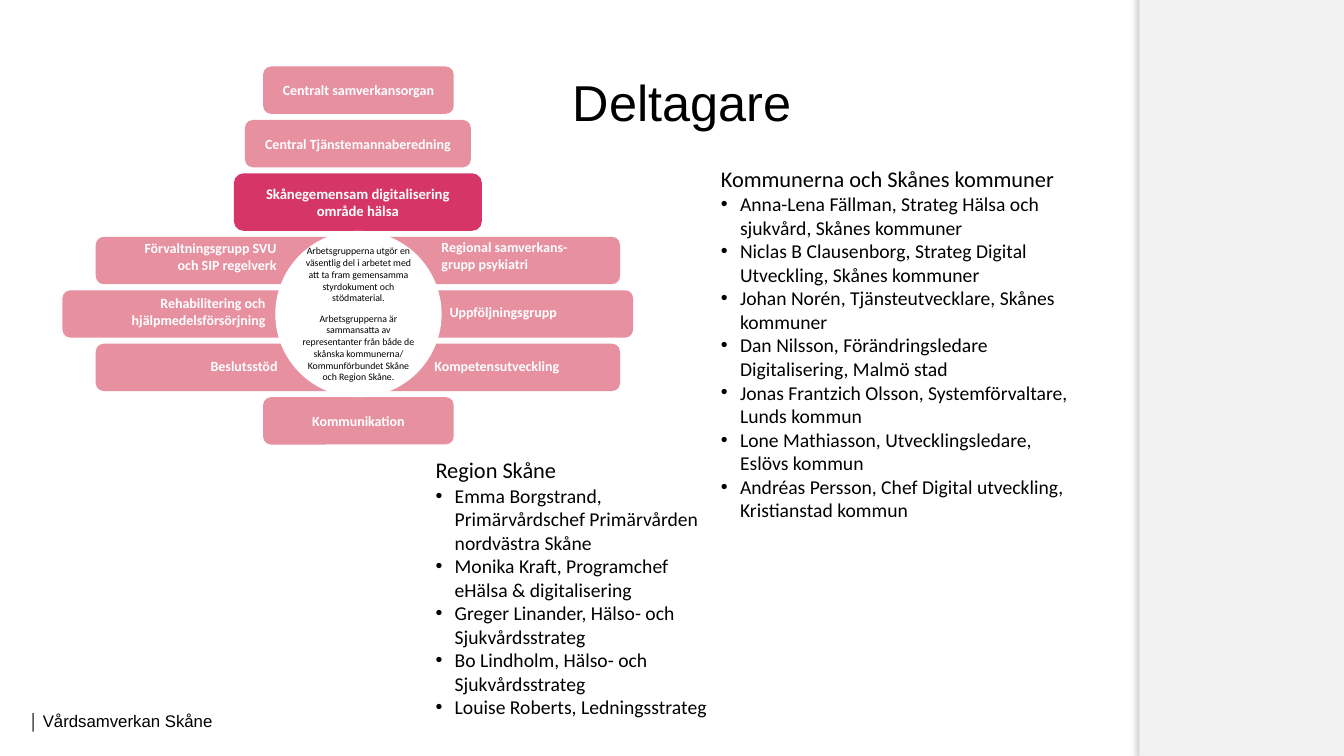
from dataclasses import dataclass

from lxml import etree
from pptx import Presentation
from pptx.dml.color import RGBColor
from pptx.enum.shapes import MSO_SHAPE as SHAPE
from pptx.enum.text import MSO_ANCHOR as ANCHOR, PP_ALIGN as ALIGN
from pptx.oxml.ns import qn
from pptx.util import Pt

PX = 9144  # EMU per px, 100 px to the inch


@dataclass(frozen=True)
class Theme:
    body: str = "Calibri"
    display: str = "Arial"
    black: str = "000000"
    white: str = "FFFFFF"
    panel: str = "F2F2F2"
    pink: str = "E790A0"
    magenta: str = "D63667"
    title: float = 36
    heading: float = 16
    bullet: float = 14
    footer: float = 12
    focus: float = 10.5
    label: float = 10
    note: float = 7


THEME = Theme()
BAR_H = 47
ROW_STEP = 53

REGION = [
    "Emma Borgstrand, Primärvårdschef Primärvården nordvästra Skåne",
    "Monika Kraft, Programchef eHälsa & digitalisering",
    "Greger Linander, Hälso- och Sjukvårdsstrateg",
    "Bo Lindholm, Hälso- och Sjukvårdsstrateg",
    "Louise Roberts, Ledningsstrateg",
]
MUNICIPALITIES = [
    "Anna-Lena Fällman, Strateg Hälsa och sjukvård, Skånes kommuner",
    "Niclas B Clausenborg, Strateg Digital Utveckling, Skånes kommuner",
    "Johan Norén, Tjänsteutvecklare, Skånes kommuner",
    "Dan Nilsson, Förändringsledare Digitalisering, Malmö stad",
    "Jonas Frantzich Olsson, Systemförvaltare, Lunds kommun",
    "Lone Mathiasson, Utvecklingsledare, Eslövs kommun",
    "Andréas Persson, Chef Digital utveckling, Kristianstad kommun",
]
GROUP_NOTE = [
    "Arbetsgrupperna utgör en väsentlig del i arbetet med att ta fram "
    "gemensamma styrdokument och stödmaterial.",
    "Arbetsgrupperna är sammansatta av representanter från både de skånska "
    "kommunerna/ Kommunförbundet Skåne och Region Skåne.",
]
# left, width, row, text
BARS = [
    (261, 189, 0, ["Centralt samverkansorgan"]),
    (243, 224, 1, ["Central Tjänstemannaberedning"]),
    (95, 520, 3, []),
    (62, 566, 4, []),
    (95, 520, 5, []),
    (261, 189, 6, ["Kommunikation"]),
]
# left, top, height, alignment, text
GROUP_LABELS = [
    (113, 233, 46, ALIGN.RIGHT, ["Förvaltningsgrupp SVU", "och SIP regelverk"]),
    (102, 287, 46, ALIGN.RIGHT, ["Rehabilitering och hjälpmedelsförsörjning"]),
    (114, 350, 28, ALIGN.RIGHT, ["Beslutsstöd"]),
    (428, 232, 46, ALIGN.LEFT, ["Regional samverkans-", "grupp psykiatri"]),
    (436, 296, 28, ALIGN.LEFT, ["Uppföljningsgrupp"]),
    (421, 350, 28, ALIGN.LEFT, ["Kompetensutveckling"]),
]


def style(r, size, color=THEME.black, font=THEME.body, bold=False):
    r.font.name = font
    r.font.size = Pt(size)
    r.font.bold = bold
    r.font.color.rgb = RGBColor.from_string(color)


def write(tf, lines, size, color=THEME.black, align=ALIGN.LEFT, font=THEME.body, bold=False):
    tf.word_wrap = True
    tf.text = "\n".join(lines)
    for p in tf.paragraphs:
        p.alignment = align
        for r in p.runs:
            style(r, size, color, font, bold)


def remove_insets(tf):
    tf.margin_left = tf.margin_top = tf.margin_right = tf.margin_bottom = 0


def add_text(s, left, top, width, height, anchor=ANCHOR.TOP):
    tf = s.shapes.add_textbox(left * PX, top * PX, width * PX, height * PX).text_frame
    tf.word_wrap = True
    tf.vertical_anchor = anchor
    return tf


def add_filled(s, kind, left, top, width, height, fill):
    sp = s.shapes.add_shape(kind, left * PX, top * PX, width * PX, height * PX)
    sp.shadow.inherit = False
    sp.fill.solid()
    sp.fill.fore_color.rgb = RGBColor.from_string(fill)
    sp.line.fill.background()
    sp.text_frame.vertical_anchor = ANCHOR.MIDDLE
    return sp


def add_bar(s, left, top, width, height, fill, lines, size):
    sp = add_filled(s, SHAPE.ROUNDED_RECTANGLE, left, top, width, height, fill)
    if lines:
        write(sp.text_frame, lines, size, THEME.white, ALIGN.CENTER, bold=True)


def add_soft_shadow(sp):
    effects = sp._element.spPr.find(qn("a:effectLst"))
    shadow = etree.SubElement(effects, qn("a:outerShdw"), blurRad=str(Pt(11)),
                              dist=str(Pt(4)), dir="0", algn="ctr", rotWithShape="0")
    color = etree.SubElement(shadow, qn("a:srgbClr"), val=THEME.black)
    etree.SubElement(color, qn("a:alpha"), val="90000")


def add_bullet(p):
    pPr = p._p.get_or_add_pPr()
    pPr.set("marL", str(19 * PX))
    pPr.set("indent", str(-19 * PX))
    etree.SubElement(pPr, qn("a:buFont"), typeface=THEME.display)
    etree.SubElement(pPr, qn("a:buChar"), char="•")


def add_members(s, left, top, width, height, heading, members):
    tf = add_text(s, left, top, width, height)
    remove_insets(tf)
    write(tf, [heading, *members], THEME.bullet)
    style(tf.paragraphs[0].runs[0], THEME.heading)
    for p in tf.paragraphs[1:]:
        add_bullet(p)


def add_footer(s):
    p = add_text(s, 19, 695, 300, 40, ANCHOR.MIDDLE).paragraphs[0]
    for text, size, bold in [("│", 11, True), (" ", 10.5, False),
                             ("Vårdsamverkan Skåne", THEME.footer, False)]:
        r = p.add_run()
        r.text = text
        style(r, size, font=THEME.display, bold=bold)


def add_title(s, text):
    tf = add_text(s, 568, 32, 280, 145, ANCHOR.MIDDLE)
    remove_insets(tf)
    write(tf, [text], THEME.title, font=THEME.display)
    tf.paragraphs[0].line_spacing = 0.9


def add_organisation(s):
    for left, width, row, lines in BARS:
        # Rows below the taller focus bar sit 10 px lower
        top = 66 + row * ROW_STEP + (10 if row > 2 else 0)
        add_bar(s, left, top, width, BAR_H, THEME.pink, lines, THEME.label)
    add_bar(s, 232, 172, 246, 57, THEME.magenta,
            ["Skånegemensam digitalisering", "område hälsa"], THEME.focus)

    tf = add_filled(s, SHAPE.OVAL, 273, 229, 165, 165, THEME.white).text_frame
    remove_insets(tf)
    write(tf, GROUP_NOTE, THEME.note, align=ALIGN.CENTER)
    tf.paragraphs[0].space_after = Pt(6)

    for left, top, height, align, lines in GROUP_LABELS:
        write(add_text(s, left, top, 171, height), lines, THEME.label,
              THEME.white, align, bold=True)


def main():
    prs = Presentation()
    prs.slide_width, prs.slide_height = 1333 * PX, 750 * PX
    s = prs.slides.add_slide(prs.slide_layouts[6])
    add_soft_shadow(add_filled(s, SHAPE.RECTANGLE, 1130, -10, 204, 767, THEME.panel))
    add_footer(s)
    add_members(s, 432, 453, 277, 218, "Region Skåne", REGION)
    add_members(s, 715, 164, 350, 170, "Kommunerna och Skånes kommuner", MUNICIPALITIES)
    add_organisation(s)
    add_title(s, "Deltagare")
    prs.save("out.pptx")


if __name__ == "__main__":
    main()
